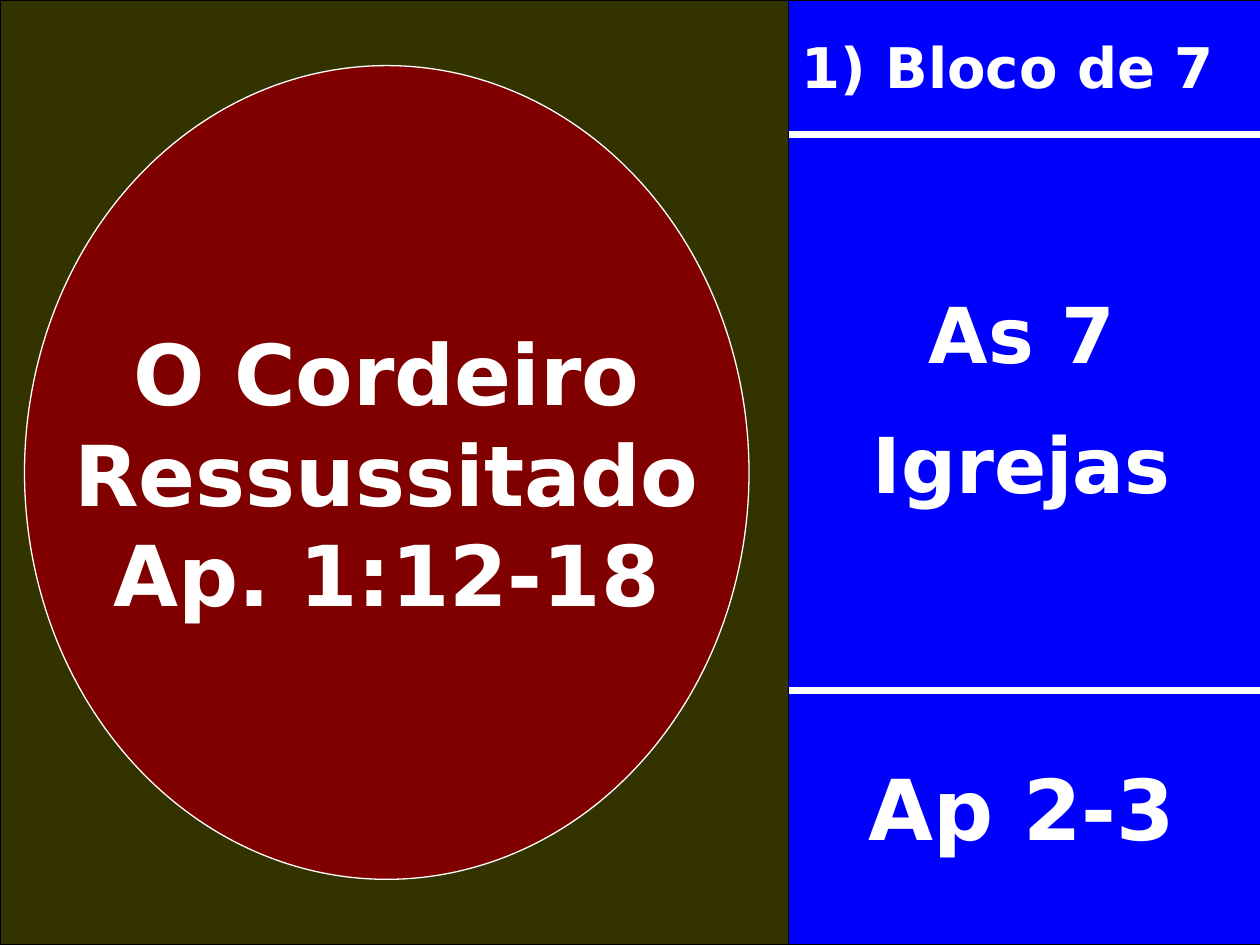
from pptx import Presentation
from pptx.dml.color import RGBColor
from pptx.enum.shapes import MSO_CONNECTOR, MSO_SHAPE
from pptx.enum.text import MSO_ANCHOR, MSO_AUTO_SIZE, PP_ALIGN
from pptx.oxml.ns import qn
from pptx.util import Pt
from lxml.etree import SubElement

WHITE = RGBColor(0xFF, 0xFF, 0xFF)
BLACK = RGBColor(0x00, 0x00, 0x00)
BLUE = RGBColor(0x00, 0x00, 0xFF)
OLIVE = RGBColor(0x33, 0x33, 0x00)
MAROON = RGBColor(0x80, 0x00, 0x00)
FONT = "DejaVu Sans"


def add_filled_shape(slide, kind, box, fill, line):
    shape = slide.shapes.add_shape(kind, *(Pt(length) for length in box))
    shape.shadow.inherit = False
    shape.fill.solid()
    shape.fill.fore_color.rgb = fill
    shape.line.color.rgb = line
    shape.line.width = Pt(0.75)
    return shape


def write_lines(text_frame, lines, size, alignment, space_before=0):
    for index, line in enumerate(lines):
        paragraph = text_frame.paragraphs[0] if index == 0 else text_frame.add_paragraph()
        paragraph.alignment = alignment
        paragraph.space_before = Pt(space_before)
        run = paragraph.add_run()
        run.text = line
        run.font.name = FONT
        run.font.size = Pt(size)
        run.font.bold = True
        run.font.color.rgb = WHITE


def add_label(slide, box, lines, size, alignment):
    label = slide.shapes.add_textbox(*(Pt(length) for length in box))
    label.text_frame.word_wrap = True
    label.text_frame.auto_size = MSO_AUTO_SIZE.SHAPE_TO_FIT_TEXT
    write_lines(label.text_frame, lines, size, alignment, size / 2)


def add_divider(slide, left, right, y):
    divider = slide.shapes.add_connector(
        MSO_CONNECTOR.STRAIGHT, Pt(left), Pt(y), Pt(right), Pt(y))
    divider.line.color.rgb = WHITE
    divider.line.width = Pt(4)
    SubElement(divider._element.spPr, qn("a:effectLst"))


def add_churches_panel(slide, left, top, width, height):
    add_filled_shape(slide, MSO_SHAPE.RECTANGLE, (left, top, width, height), BLUE, BLACK)
    for offset in (77, 394.5):
        add_divider(slide, left, left + width, top + offset)
    add_label(slide, (left + 6, top + 15, width - 9, 45.5),
              ["1) Bloco de 7"], 32, PP_ALIGN.LEFT)
    add_label(slide, (left + 13, top + 160, width - 26, 139),
              ["As 7", "Igrejas"], 44, PP_ALIGN.CENTER)
    add_label(slide, (left + 11.5, top + 428.5, width - 23, 65),
              ["Ap 2-3"], 48, PP_ALIGN.CENTER)


def add_lamb_panel(slide, left, top, width, height):
    add_filled_shape(slide, MSO_SHAPE.RECTANGLE, (left, top, width, height), OLIVE, BLACK)
    ellipse = add_filled_shape(
        slide, MSO_SHAPE.OVAL, (left + 14, top + 37.5, 414, 465), MAROON, WHITE)
    ellipse.text_frame.word_wrap = False
    ellipse.text_frame.vertical_anchor = MSO_ANCHOR.MIDDLE
    write_lines(ellipse.text_frame, ["O Cordeiro", "Ressussitado", "Ap. 1:12-18"],
                48, PP_ALIGN.CENTER)


def main():
    presentation = Presentation()
    presentation.slide_width = Pt(720)
    presentation.slide_height = Pt(540)
    slide = presentation.slides.add_slide(presentation.slide_layouts[6])
    add_churches_panel(slide, 445, 0, 278, 540)
    add_lamb_panel(slide, 0, 0, 450.5, 540)
    presentation.save("out.pptx")


if __name__ == "__main__":
    main()
